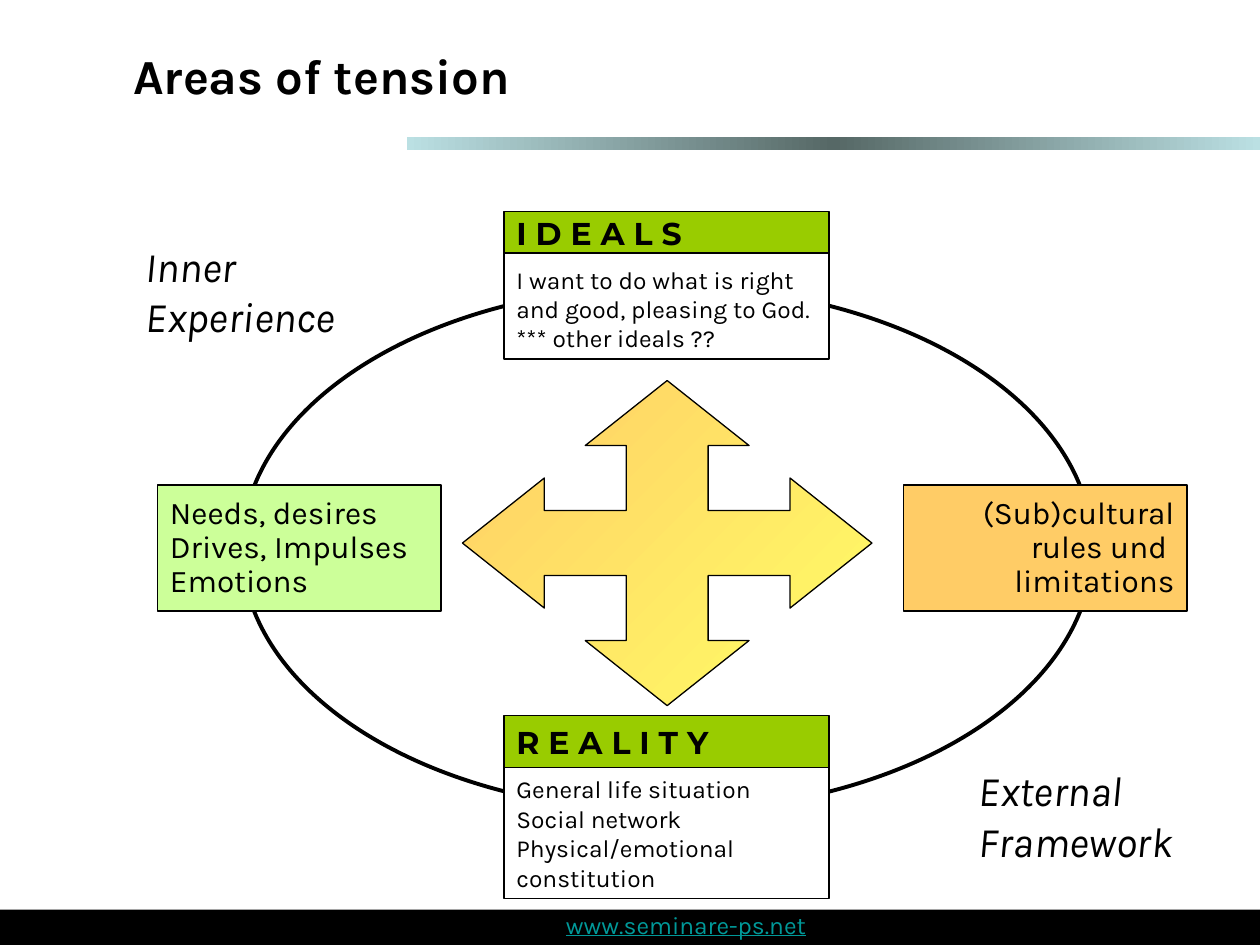
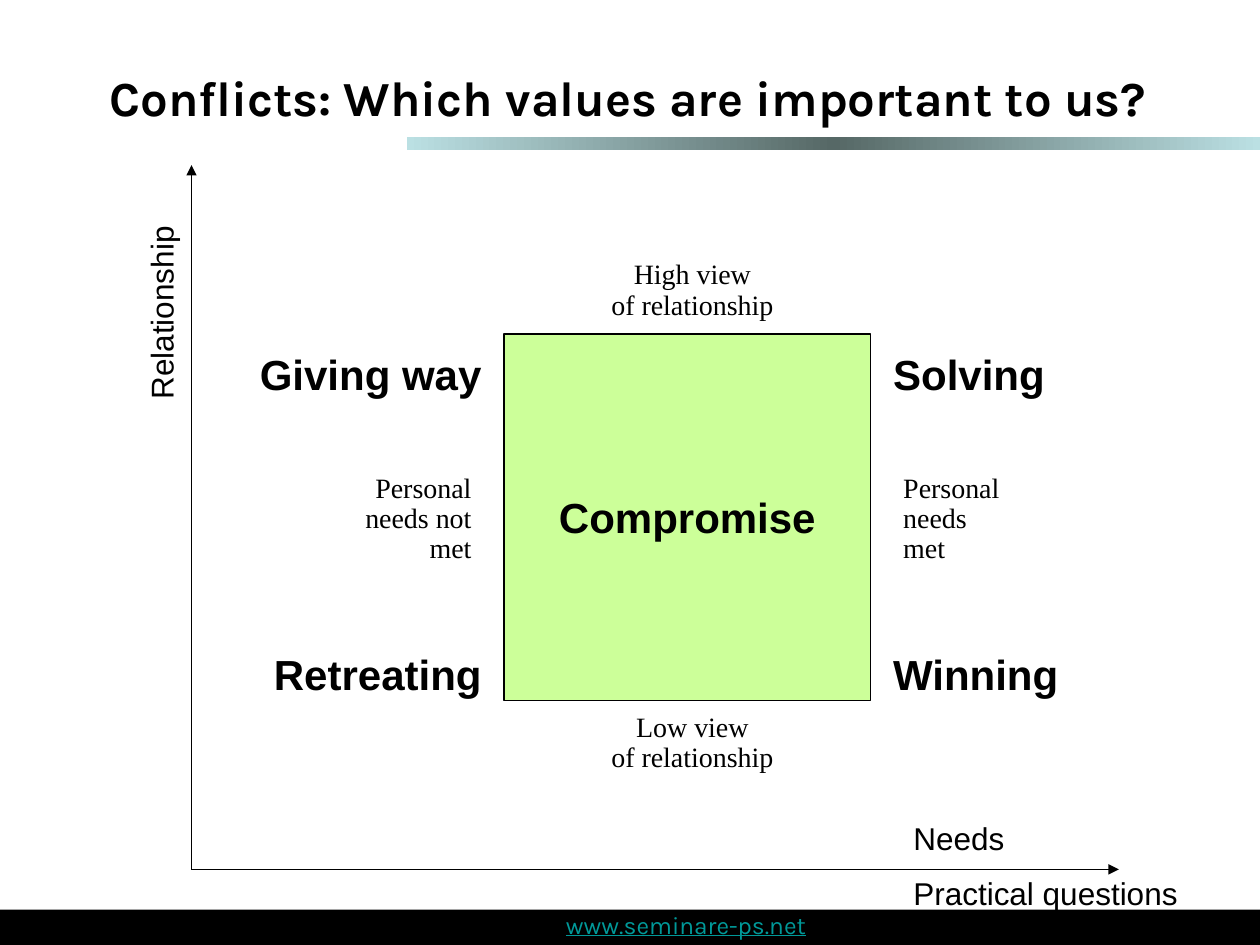
import dataclasses

import lxml.etree
import pptx
import pptx.dml.color
import pptx.enum.shapes
import pptx.enum.text
import pptx.oxml.ns
import pptx.util

Inches = pptx.util.Inches
Pt = pptx.util.Pt
qn = pptx.oxml.ns.qn
SHAPE = pptx.enum.shapes.MSO_SHAPE
ALIGN = pptx.enum.text.PP_ALIGN
ANCHOR = pptx.enum.text.MSO_ANCHOR


@dataclasses.dataclass(frozen=True)
class Theme:
    black: str = "000000"
    white: str = "FFFFFF"
    link: str = "009999"
    header: str = "99CC00"
    lime: str = "CCFF99"
    orange: str = "FFCC66"
    band: tuple = ((0, "BBE0E3"), (50, "566866"), (100, "BBE0E3"))
    arrow: tuple = ((0, "FFCC66"), (100, "FFFF66"))
    body_font: str = "Karla"
    header_font: str = "Montserrat"
    label_font: str = "Arial"
    note_font: str = "Times New Roman"
    title: int = 28
    large: int = 24
    medium: int = 18
    note: int = 16
    small: int = 14
    thin: float = 0.75
    thick: float = 2.25


T = Theme()


def rgb(value):
    return pptx.dml.color.RGBColor.from_string(value)


def write(sp, paragraphs, size, font=T.body_font, color=T.black, bold=False,
          italic=False, underline=False, align=ALIGN.LEFT, anchor=ANCHOR.TOP,
          spacing=None, gap=0):
    tf = sp.text_frame
    tf.word_wrap = True
    tf.vertical_anchor = anchor
    for i, text in enumerate(paragraphs):
        p = tf.add_paragraph() if i else tf.paragraphs[0]
        p.text = text
        p.alignment = align
        if spacing:
            p.line_spacing = spacing
        if i and gap:
            p.space_before = Pt(gap)
        p.font.size = Pt(size)
        p.font.name = font
        p.font.bold = bold
        p.font.italic = italic
        p.font.underline = underline
        p.font.color.rgb = rgb(color)


def add_text(s, box, paragraphs, size, **style):
    sp = s.shapes.add_textbox(*map(Inches, box))
    write(sp, paragraphs, size, **style)
    return sp


def paint(sp, fill=None, line=T.black, width=T.thin, angle=0):
    sp.shadow.inherit = False
    if fill is None:
        sp.fill.background()
    elif isinstance(fill, str):
        sp.fill.solid()
        sp.fill.fore_color.rgb = rgb(fill)
    else:
        sp.fill.gradient()
        sp.fill.gradient_angle = angle
        stops = next(sp._element.spPr.iter(qn("a:gsLst")))
        for stop in list(stops):
            stops.remove(stop)
        for position, color in fill:
            stop = lxml.etree.SubElement(stops, qn("a:gs"), pos=str(position * 1000))
            lxml.etree.SubElement(stop, qn("a:srgbClr"), val=color)
    if line:
        sp.line.color.rgb = rgb(line)
        sp.line.width = Pt(width)
    else:
        sp.line.fill.background()


def add_box(s, box, fill, shape=SHAPE.RECTANGLE, **style):
    sp = s.shapes.add_shape(shape, *map(Inches, box))
    paint(sp, fill, **style)
    return sp


def add_arrow(s, x1, y1, x2, y2):
    sp = s.shapes.add_connector(pptx.enum.shapes.MSO_CONNECTOR.STRAIGHT,
                                *map(Inches, (x1, y1, x2, y2)))
    sp.line.color.rgb = rgb(T.black)
    sp.line.width = Pt(T.thin)
    lxml.etree.SubElement(sp.line._get_or_add_ln(), qn("a:tailEnd"), type="triangle")
    lxml.etree.SubElement(sp._element.spPr, qn("a:effectLst"))


def add_slide(prs, title, title_box):
    s = prs.slides.add_slide(prs.slide_layouts[6])
    add_box(s, (3.23, 1.09, 6.77, 0.1), T.band, line=None)
    add_box(s, (0, 7.22, 10, 0.28), T.black, line=None)
    add_text(s, (2.14, 7.17, 6.61, 0.33), ["www.seminare-ps.net"], T.small,
             color=T.link, underline=True, align=ALIGN.CENTER)
    add_text(s, title_box, [title], T.title, bold=True, anchor=ANCHOR.MIDDLE)
    return s


def add_panel(s, box, header_height, header, lines):
    x, y, w, h = box
    overlap = header_height / 2
    sp = add_box(s, (x, y + overlap, w, h - overlap), T.white)
    write(sp, lines, T.small, anchor=ANCHOR.BOTTOM)
    sp = add_box(s, (x, y, w, header_height), T.header)
    write(sp, [header], T.medium, font=T.header_font, bold=True, anchor=ANCHOR.MIDDLE)


def add_side(s, box, fill, paragraphs, align):
    sp = add_box(s, box, fill)
    write(sp, paragraphs, T.medium, align=align, anchor=ANCHOR.MIDDLE, spacing=0.9)


def add_four_way_arrow(s, box):
    x, y, w, h = box
    arm = [(0.6, 0.2), (0.7, 0.2), (0.5, 0), (0.3, 0.2), (0.4, 0.2), (0.4, 0.4)]
    outline = []
    for _ in range(4):
        outline += arm
        arm = [(v, 1 - u) for u, v in arm]
    points = [(Inches(x + u * w), Inches(y + v * h)) for u, v in outline]
    builder = s.shapes.build_freeform(*points[0])
    builder.add_line_segments(points[1:], close=True)
    paint(builder.convert_to_shape(), T.arrow, angle=315)


def tension_slide(prs):
    s = add_slide(prs, "Areas of tension", (0.96, 0.1, 9.04, 0.99))
    add_box(s, (1.92, 2.27, 6.75, 4.17), None, SHAPE.OVAL, width=T.thick)
    add_side(s, (1.25, 3.85, 2.25, 1), T.lime,
             ["Needs, desires", "Drives, Impulses", "Emotions"], ALIGN.LEFT)
    add_panel(s, (4, 1.68, 2.58, 1.17), 0.33, "I D E A L S",
              ["I want to do what is right and good, pleasing to God.",
               "*** other ideals ??"])
    add_panel(s, (4, 5.68, 2.58, 1.45), 0.41, "R E A L I T Y",
              ["General life situation", "Social network",
               "Physical/emotional constitution"])
    for x, y, text in ((7.67, 6.02, "External\nFramework"),
                       (1.06, 1.86, "Inner\nExperience")):
        add_text(s, (x, y, 2.33, 0.9), [text], T.large, italic=True)
    add_side(s, (7.17, 3.85, 2.25, 1), T.orange,
             ["(Sub)cultural\nrules und \nlimitations"], ALIGN.RIGHT)
    add_four_way_arrow(s, (3.67, 3.02, 3.25, 2.58))


def add_axes(s, box):
    x, y, w, h = box
    add_arrow(s, x, y + h, x, y)
    add_arrow(s, x, y + h, x + w, y + h)
    sp = add_text(s, (x - 1.22, y + 0.78, 1.96, 0.4), ["Relationship"], T.medium,
                  font=T.label_font)
    sp.rotation = 270
    add_text(s, (x + 5.63, y + h - 0.45, 2.52, 0.85),
             ["Needs", "Practical questions"], T.medium, font=T.label_font, gap=10)


def add_matrix(s, box):
    x, y, w, h = box
    right, bottom = x + w, y + h
    label_w, label_h, note_w, side_w, side_h = 2.12, 0.5, 3.31, 1.65, 0.82
    middle = y + h / 2
    label = dict(size=T.large, font=T.label_font, bold=True)
    note = dict(size=T.note, font=T.note_font, spacing=0.9)

    add_box(s, box, T.lime)
    add_text(s, (x, middle - label_h / 2, w, label_h), ["Compromise"],
             align=ALIGN.CENTER, **label)
    columns = (
        (x, -1, ALIGN.RIGHT, "Giving way", "Personal\nneeds not\nmet", "Retreating"),
        (right, 1, ALIGN.LEFT, "Solving", "Personal\nneeds\nmet", "Winning"),
    )
    for edge, side, align, upper, between, lower in columns:
        label_x = edge + side * 0.08 - (label_w if side < 0 else 0)
        side_x = edge + side * 0.16 - (side_w if side < 0 else 0)
        for top, text in ((y + 0.07, upper), (bottom - 0.46, lower)):
            add_text(s, (label_x, top, label_w, label_h), [text], align=align, **label)
        add_text(s, (side_x, middle - side_h / 2 + 0.02, side_w, side_h), [between],
                 align=align, **note)
    for top, text in ((y - 0.63, "High view\nof relationship"),
                      (bottom + 0.05, "Low view\nof relationship")):
        add_text(s, (x - 0.16, top, note_w, 0.58), [text], align=ALIGN.CENTER, **note)


def conflicts_slide(prs):
    s = add_slide(prs, "Conflicts: Which values are important to us?",
                  (0.77, 0.46, 8.97, 0.62))
    add_axes(s, (1.52, 1.31, 7.36, 5.59))
    add_matrix(s, (4, 2.65, 2.91, 2.91))


def main():
    prs = pptx.Presentation()
    prs.slide_width, prs.slide_height = Inches(10), Inches(7.5)
    tension_slide(prs)
    conflicts_slide(prs)
    prs.save("out.pptx")


if __name__ == "__main__":
    main()
